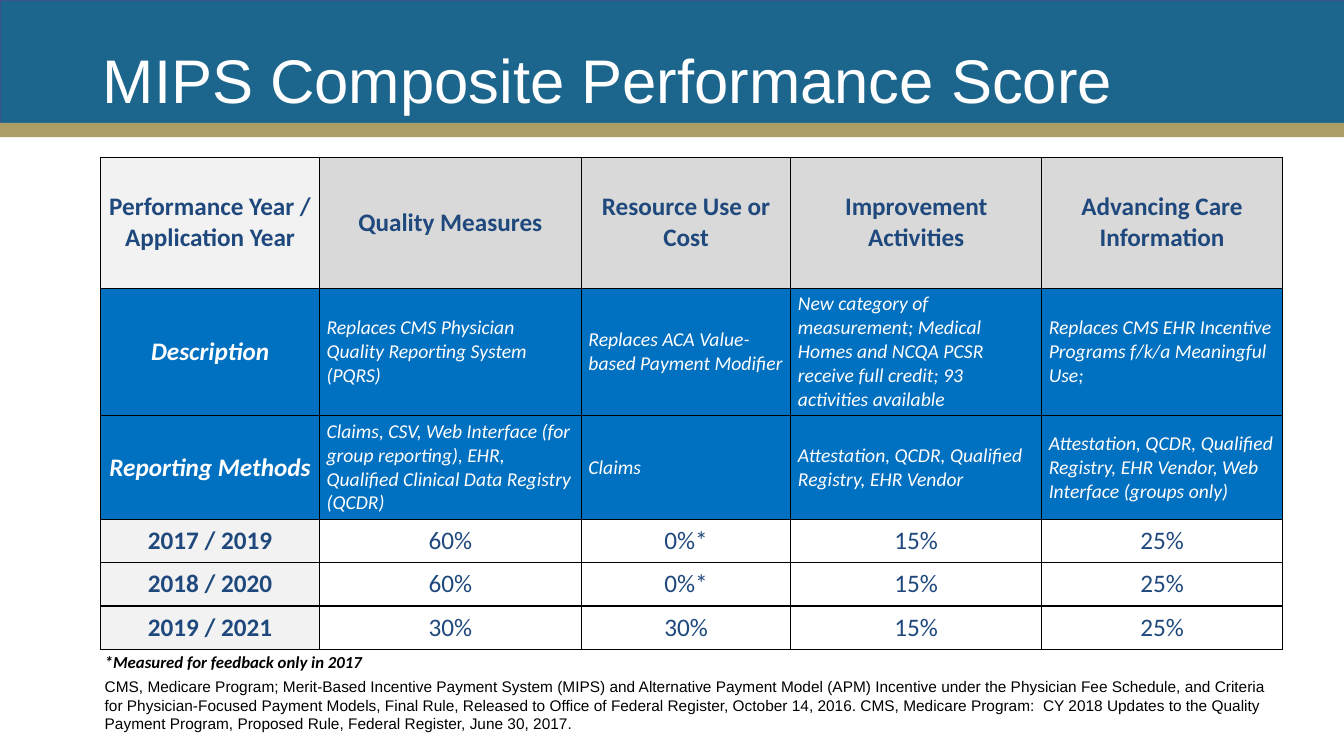
from lxml.etree import SubElement
from pptx import Presentation
from pptx.dml.color import RGBColor
from pptx.enum.shapes import MSO_SHAPE
from pptx.enum.text import MSO_ANCHOR, MSO_AUTO_SIZE, PP_ALIGN
from pptx.oxml.ns import qn
from pptx.util import Cm, Pt

# Content
TITLE = "MIPS Composite Performance Score"
HEADER = ["Performance Year / Application Year", "Quality Measures", "Resource Use or Cost",
          "Improvement Activities", "Advancing Care Information"]
DETAILS = [
    ["Description",
     "Replaces CMS Physician Quality Reporting System (PQRS)",
     "Replaces ACA Value-based Payment Modifier",
     "New category of measurement; Medical Homes and NCQA PCSR receive full credit; "
     "93 activities available",
     "Replaces CMS EHR Incentive Programs f/k/a Meaningful Use;"],
    ["Reporting Methods",
     "Claims, CSV, Web Interface (for group reporting), EHR, "
     "Qualified Clinical Data Registry (QCDR)",
     "Claims",
     "Attestation, QCDR, Qualified Registry, EHR Vendor",
     "Attestation, QCDR, Qualified Registry, EHR Vendor, Web Interface (groups only)"],
]
YEARS = [
    ["2017 / 2019", "60%", "0%*", "15%", "25%"],
    ["2018 / 2020", "60%", "0%*", "15%", "25%"],
    ["2019 / 2021", "30%", "30%", "15%", "25%"],
]
FOOTNOTE = "*Measured for feedback only in 2017"
SOURCE = ("CMS, Medicare Program; Merit-Based Incentive Payment System (MIPS) and Alternative "
          "Payment Model (APM) Incentive under the Physician Fee Schedule, and Criteria for "
          "Physician-Focused Payment Models, Final Rule, Released to Office of Federal Register, "
          "October 14, 2016. CMS, Medicare Program:  CY 2018 Updates to the Quality Payment "
          "Program, Proposed Rule, Federal Register, June 30, 2017.")

COLORS = {"banner": "1C668D", "edge": "3C5284", "gold": "AC9D66", "navy": "1F497D",
          "blue": "0070C0", "grey": "D9D9D9", "pale": "F2F2F2", "white": "FFFFFF",
          "black": "000000"}
COL_WIDTHS = [5.51, 6.6, 5.28, 6.32, 6.07]
ROW_HEIGHTS = [3.3, 3.2, 2.64, 1.07, 1.1, 1.1]
SLIDE_W, SLIDE_H = 33.87, 19.05


def color(name):
    return RGBColor.from_string(COLORS[name])


def write(tf, text, size=18, font="Calibri", ink="navy", bold=False, italic=False,
          align=PP_ALIGN.LEFT, spacing=None):
    p = tf.paragraphs[0]
    p.alignment = align
    if spacing:
        p.line_spacing = spacing
    r = p.add_run()
    r.text = text
    r.font.size, r.font.name = Pt(size), font
    r.font.bold, r.font.italic = bold, italic
    r.font.color.rgb = color(ink)


def add_band(s, top, height, fill, edge=None):
    sp = s.shapes.add_shape(MSO_SHAPE.RECTANGLE, 0, Cm(top), Cm(SLIDE_W), Cm(height))
    sp.shadow.inherit = False
    sp.fill.solid()
    sp.fill.fore_color.rgb = color(fill)
    if edge:
        sp.line.color.rgb = color(edge)
        sp.line.width = Pt(0.5)
    else:
        sp.line.fill.background()


def add_text(s, left, top, width, height, text, wrap=True, grow=True,
             anchor=MSO_ANCHOR.TOP, **style):
    tf = s.shapes.add_textbox(Cm(left), Cm(top), Cm(width), Cm(height)).text_frame
    tf.word_wrap = wrap
    tf.auto_size = MSO_AUTO_SIZE.SHAPE_TO_FIT_TEXT if grow else MSO_AUTO_SIZE.NONE
    tf.vertical_anchor = anchor
    write(tf, text, **style)


def add_borders(cell):
    tcPr = cell._tc.get_or_add_tcPr()
    for side in ("a:lnL", "a:lnR", "a:lnT", "a:lnB"):
        ln = SubElement(tcPr, qn(side), w=str(Pt(1)))
        fill = SubElement(ln, qn("a:solidFill"))
        SubElement(fill, qn("a:srgbClr"), val=COLORS["black"])


def cell_format(row, col):
    """Return the fill name and the text format for a table cell."""
    label = col == 0
    centre = {"align": PP_ALIGN.CENTER}
    if row == 0:
        return ("pale" if label else "grey"), {"bold": True, **centre}
    if row <= len(DETAILS):
        style = {"bold": True, **centre} if label else {"size": 14}
        return "blue", {"ink": "white", "italic": True, **style}
    return ("pale" if label else None), {"bold": label, **centre}


def add_score_table(s, left, top):
    rows = [HEADER, *DETAILS, *YEARS]
    table = s.shapes.add_table(len(rows), len(HEADER), Cm(left), Cm(top),
                               Cm(sum(COL_WIDTHS)), Cm(sum(ROW_HEIGHTS))).table
    table.first_row = table.horz_banding = False
    for column, width in zip(table.columns, COL_WIDTHS):
        column.width = Cm(width)
    for i, (texts, height) in enumerate(zip(rows, ROW_HEIGHTS)):
        table.rows[i].height = Cm(height)
        for j, text in enumerate(texts):
            cell = table.cell(i, j)
            fill, style = cell_format(i, j)
            cell.margin_left = cell.margin_right = Cm(0.18)
            cell.margin_top = cell.margin_bottom = 0
            cell.vertical_anchor = MSO_ANCHOR.MIDDLE
            add_borders(cell)
            if fill:
                cell.fill.solid()
                cell.fill.fore_color.rgb = color(fill)
            else:
                cell.fill.background()
            write(cell.text_frame, text, **style)


def main():
    prs = Presentation()
    prs.slide_width, prs.slide_height = Cm(SLIDE_W), Cm(SLIDE_H)
    s = prs.slides.add_slide(prs.slide_layouts[6])

    # Banner and title
    add_band(s, 0, 3.15, "banner", edge="edge")
    add_band(s, 3.1, 0.36, "gold")
    add_text(s, 2.34, 0.99, 29.21, 2.24, TITLE, grow=False, anchor=MSO_ANCHOR.MIDDLE,
             size=44, font="Arial", ink="white", spacing=0.9)

    # Source, score table and footnote
    add_text(s, 2.39, 16.94, 30.02, 1.68, SOURCE, size=11, font="Arial", ink="black")
    add_score_table(s, 2.54, 3.96)
    add_text(s, 2.39, 16.31, 7.11, 0.76, FOOTNOTE, wrap=False,
             size=12, ink="black", bold=True, italic=True)

    prs.save("out.pptx")


if __name__ == "__main__":
    main()
